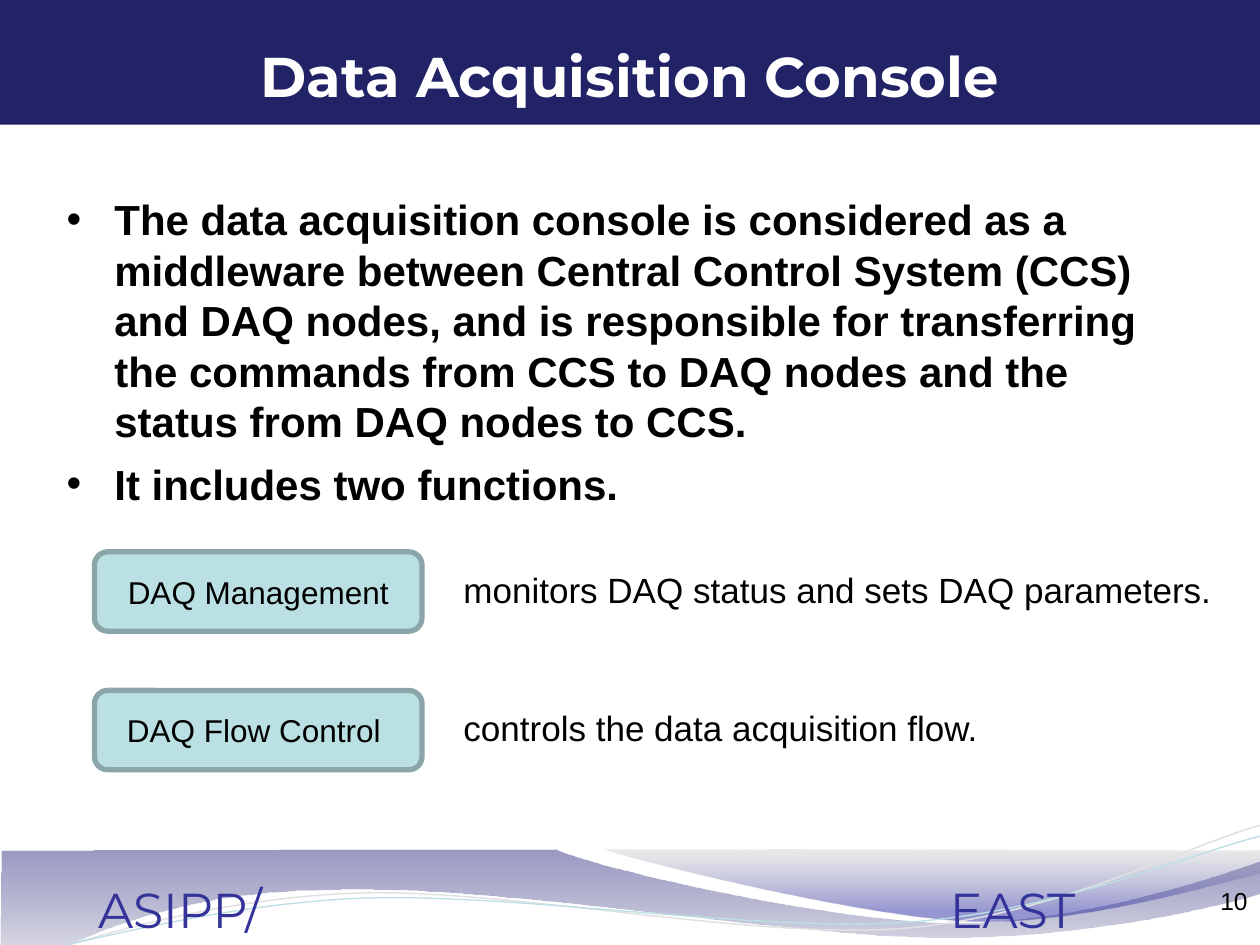
from lxml import etree
from pptx import Presentation
from pptx import util as u
from pptx.dml.color import RGBColor
from pptx.enum import shapes, text
from pptx.oxml import parse_xml
from pptx.oxml.ns import nsdecls, qn

SANS, DISPLAY = "Arial", "Montserrat"
NAVY, TEAL, TEAL_EDGE = "222267", "BBE0E3", "8AA6A8"
WHITE, BLACK, INDIGO = "FFFFFF", "000000", "333399"

LEFT_WAVE = [
    (0.01, 6.75), (4.41, 6.74),
    (4.77, 6.9, 6.65, 7.32, 7.59, 7.32), (8.54, 7.32, 9.59, 6.98, 10.01, 6.83),
    (10.02, 7.08),
    (9.84, 7.15, 8.71, 7.44, 7.47, 7.44), (6.23, 7.43, 3.83, 7, 2.58, 7.06),
    (1.3, 7.07, 0.47, 7.5, 0, 7.78),
]
RIGHT_WAVE = [
    (4.79, 6.74),
    (5.09, 6.84, 6.82, 7.27, 7.69, 7.31), (8.56, 7.34, 9.61, 7.02, 10, 6.93),
    (10, 6.75),
]
GREY_CURVE = [
    (0.02, 7.68),
    (0.5, 7.5, 1.6, 7.14, 2.79, 7.09), (3.97, 7.04, 5.95, 7.46, 7.15, 7.37),
    (8.35, 7.28, 9.4, 6.72, 10, 6.55),
]
TEAL_CURVE = [
    (0.02, 7.61),
    (0.49, 7.53, 1.66, 7.18, 2.85, 7.13), (4.05, 7.08, 5.99, 7.4, 7.19, 7.32),
    (8.38, 7.24, 9.43, 6.78, 10.02, 6.63),
]
BULLETS = [
    "The data acquisition console is considered as a middleware between Central "
    "Control System (CCS) and DAQ nodes, and is responsible for transferring the "
    "commands from CCS to DAQ nodes and the status from DAQ nodes to CCS.",
    "It includes two functions.",
]
FUNCTIONS = [
    ("DAQ Management", "monitors DAQ status and sets DAQ parameters.", 6.14),
    ("DAQ Flow Control ", "controls the data acquisition flow.", 5.35),
]


def rgb(value):
    return RGBColor.from_string(value)


def inches(*values):
    return [u.Inches(v) for v in values]


def outline(s, segments, close):
    points = [inches(*seg[i:i + 2]) for seg in segments for i in range(0, len(seg), 2)]
    fb = s.shapes.build_freeform(*points[0], scale=1.0)
    fb.add_line_segments(points[1:], close=close)
    sp = fb.convert_to_shape()
    sp.shadow.inherit = False
    lines = iter(list(sp.element.spPr.iter(qn("a:lnTo"))))
    for seg in segments[1:]:
        first = next(lines)
        if len(seg) == 6:
            curve = etree.Element(qn("a:cubicBezTo"))
            first.addprevious(curve)
            for ln in (first, next(lines), next(lines)):
                curve.append(ln[0])
                ln.getparent().remove(ln)
    return sp


def add_wave(s, segments, stops):
    sp = outline(s, segments, True)
    sp.line.fill.background()
    gs = "".join(
        f'<a:gs pos="{pos * 1000}"><a:srgbClr val="{color}">'
        f'<a:alpha val="{alpha * 1000}"/></a:srgbClr></a:gs>'
        for pos, color, alpha in stops)
    grad = parse_xml(f'<a:gradFill {nsdecls("a")} rotWithShape="1"><a:gsLst>{gs}</a:gsLst>'
                     '<a:lin ang="5400000" scaled="0"/></a:gradFill>')
    sp.element.spPr.find(qn("a:custGeom")).addnext(grad)


def add_curve(s, segments, color, width):
    sp = outline(s, segments, False)
    sp.fill.background()
    sp.line.color.rgb = rgb(color)
    sp.line.width = u.Pt(width)


def write(sp, lines, size, color=BLACK, font=SANS, bold=False, align="LEFT",
          anchor="TOP", bullet=False, tab=None):
    tf = sp.text_frame
    tf.word_wrap = True
    tf.vertical_anchor = getattr(text.MSO_ANCHOR, anchor)
    for i, line in enumerate(lines):
        p = tf.paragraphs[0] if i == 0 else tf.add_paragraph()
        p.alignment = getattr(text.PP_ALIGN, align)
        pPr = p._p.get_or_add_pPr()
        if bullet:
            p.space_before = u.Pt(4 if i else 0)
            p.space_after = u.Pt(3)
            pPr.set("marL", str(u.Inches(0.38)))
            pPr.set("indent", str(-u.Inches(0.38)))
            etree.SubElement(pPr, qn("a:buFont"), typeface=SANS)
            etree.SubElement(pPr, qn("a:buChar"), char="•")
        if tab:
            tabs = etree.SubElement(pPr, qn("a:tabLst"))
            etree.SubElement(tabs, qn("a:tab"), pos=str(u.Inches(tab)), algn="l")
        r = p.add_run()
        r.text = line
        r.font.name, r.font.size, r.font.bold = font, u.Pt(size), bold
        r.font.color.rgb = rgb(color)


def add_text(s, at, lines, size, **fmt):
    write(s.shapes.add_textbox(*inches(*at)), lines, size, **fmt)


def add_box(s, kind, at, fill, edge=None):
    sp = s.shapes.add_shape(kind, *inches(*at))
    sp.shadow.inherit = False
    sp.fill.solid()
    sp.fill.fore_color.rgb = rgb(fill)
    if edge:
        sp.line.color.rgb = rgb(edge)
        sp.line.width = u.Pt(3)
    else:
        sp.line.fill.background()
    return sp


def add_footer(s):
    add_wave(s, LEFT_WAVE, [(0, "1E1E79", 45), (100, "E7E7E7", 55)])
    add_wave(s, RIGHT_WAVE, [(0, "BDBDBD", 30), (80, "1B1B99", 45)])
    add_curve(s, GREY_CURVE, "E1E1E1", 0.85)
    add_curve(s, TEAL_CURVE, TEAL, 0.75)
    add_text(s, (0.68, 6.93, 9.32, 0.57), ["ASIPP/\tEAST"], 28,
             color=INDIGO, font=DISPLAY, tab=6.76)


def main():
    prs = Presentation()
    prs.slide_width, prs.slide_height = inches(10, 7.5)
    s = prs.slides.add_slide(prs.slide_layouts[6])
    rect, rounded = shapes.MSO_SHAPE.RECTANGLE, shapes.MSO_SHAPE.ROUNDED_RECTANGLE

    add_footer(s)
    add_box(s, rect, (0, 0, 10, 0.99), NAVY)
    title = add_box(s, rect, (0, 0.21, 10, 0.77), NAVY)
    write(title, ["Data Acquisition Console"], 32, color=WHITE, font=DISPLAY,
          bold=True, align="CENTER", anchor="MIDDLE")
    add_text(s, (0.43, 1.49, 9.14, 2.65), BULLETS, 24, bold=True, bullet=True)
    add_text(s, (9.52, 6.98, 0.48, 0.52), ["10"], 14, align="RIGHT")
    for i, (name, role, width) in enumerate(FUNCTIONS):
        top = 4.38 + 1.1 * i
        sp = add_box(s, rounded, (0.75, top, 2.6, 0.63), TEAL, TEAL_EDGE)
        write(sp, [name], 18, align="CENTER", anchor="MIDDLE")
        add_text(s, (3.58, top + 0.08, width, 0.44), [role], 20)
    prs.save("out.pptx")


if __name__ == "__main__":
    main()
